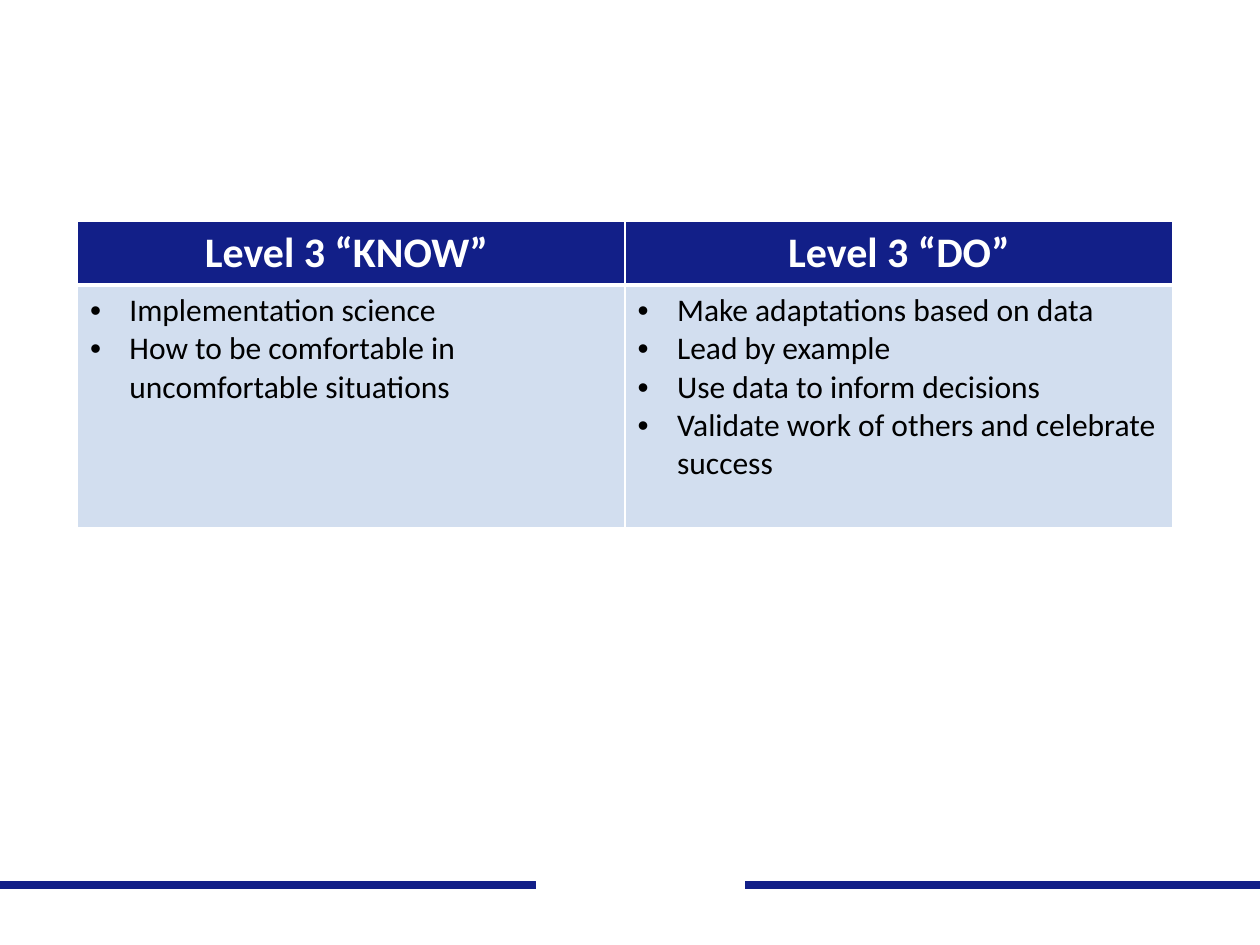
from dataclasses import dataclass

from lxml import etree
from pptx import Presentation
from pptx import util as u
from pptx.dml.color import RGBColor
from pptx.enum import shapes, text
from pptx.oxml import ns

NAVY, PALE, WHITE, BLACK = "121F88", "D2DEEF", "FFFFFF", "000000"
FONT = "Calibri"
INDENT = u.Pt(22.5)


@dataclass
class Level:
    heading: str
    points: list[str]


@dataclass
class Rule:
    start: float
    end: float
    color: str


LEVELS = [
    Level("Level 3 “KNOW” ", [
        "Implementation science",
        "How to be comfortable in uncomfortable situations",
    ]),
    Level("Level 3 “DO”", [
        "Make adaptations based on data",
        "Lead by example",
        "Use data to inform decisions",
        "Validate work of others and celebrate success",
    ]),
]
# The white rule opens a gap in the navy one
FOOTER_RULES = [Rule(0, 720, NAVY), Rule(306, 425.5, WHITE)]
FOOTER_TOP = 505.5


def rgb(color: str) -> RGBColor:
    return RGBColor.from_string(color)


def write(paragraph, content: str, *, size: float, color: str,
          bold: bool = False, centered: bool = False, bullet: bool = False) -> None:
    if bullet:
        props = paragraph._p.get_or_add_pPr()
        props.set("marL", str(INDENT))
        props.set("indent", str(-INDENT))
        etree.SubElement(props, ns.qn("a:buFont"), typeface="Arial")
        etree.SubElement(props, ns.qn("a:buChar"), char="•")
    paragraph.alignment = text.PP_ALIGN.CENTER if centered else text.PP_ALIGN.LEFT
    run = paragraph.add_run()
    run.text = content
    run.font.name, run.font.size, run.font.bold = FONT, u.Pt(size), bold
    run.font.color.rgb = rgb(color)


def style_cell(cell, fill: str, top: float = 1, bottom: float = 1) -> None:
    """Fill a cell and give it white borders."""
    props = cell._tc.get_or_add_tcPr()
    for side, width in {"L": 1, "R": 1, "T": top, "B": bottom}.items():
        border = etree.SubElement(props, ns.qn(f"a:ln{side}"), w=str(u.Pt(width)))
        solid = etree.SubElement(border, ns.qn("a:solidFill"))
        etree.SubElement(solid, ns.qn("a:srgbClr"), val=WHITE)
    cell.fill.solid()
    cell.fill.fore_color.rgb = rgb(fill)


def draw_rule(slide, rule: Rule) -> None:
    line = slide.shapes.add_connector(
        shapes.MSO_CONNECTOR.STRAIGHT, u.Pt(rule.start), u.Pt(FOOTER_TOP),
        u.Pt(rule.end), u.Pt(FOOTER_TOP))
    line.line.color.rgb = rgb(rule.color)
    line.line.width = u.Pt(4.5)
    etree.SubElement(line._element.spPr, ns.qn("a:effectLst"))


def draw_levels(slide, levels: list[Level]) -> None:
    heights = [36.5, 139]
    column_width = 313
    table = slide.shapes.add_table(
        len(heights), len(levels), u.Pt(44.25), u.Pt(126.25),
        u.Pt(column_width * len(levels)), u.Pt(sum(heights))).table
    for row, height in zip(table.rows, heights):
        row.height = u.Pt(height)
    for column, level in enumerate(levels):
        table.columns[column].width = u.Pt(column_width)
        heading, body = table.cell(0, column), table.cell(1, column)
        style_cell(heading, NAVY, bottom=3)
        style_cell(body, PALE, top=3)
        write(heading.text_frame.paragraphs[0], level.heading,
              size=24, color=WHITE, bold=True, centered=True)
        frame = body.text_frame
        for number, point in enumerate(level.points):
            paragraph = frame.add_paragraph() if number else frame.paragraphs[0]
            write(paragraph, point, size=18, color=BLACK, bullet=True)


def main() -> None:
    deck = Presentation()
    deck.slide_width, deck.slide_height = u.Pt(720), u.Pt(540)
    slide = deck.slides.add_slide(deck.slide_layouts[6])

    # Footer band
    for rule in FOOTER_RULES:
        draw_rule(slide, rule)

    # Know and do table
    draw_levels(slide, LEVELS)
    deck.save("out.pptx")


if __name__ == "__main__":
    main()
